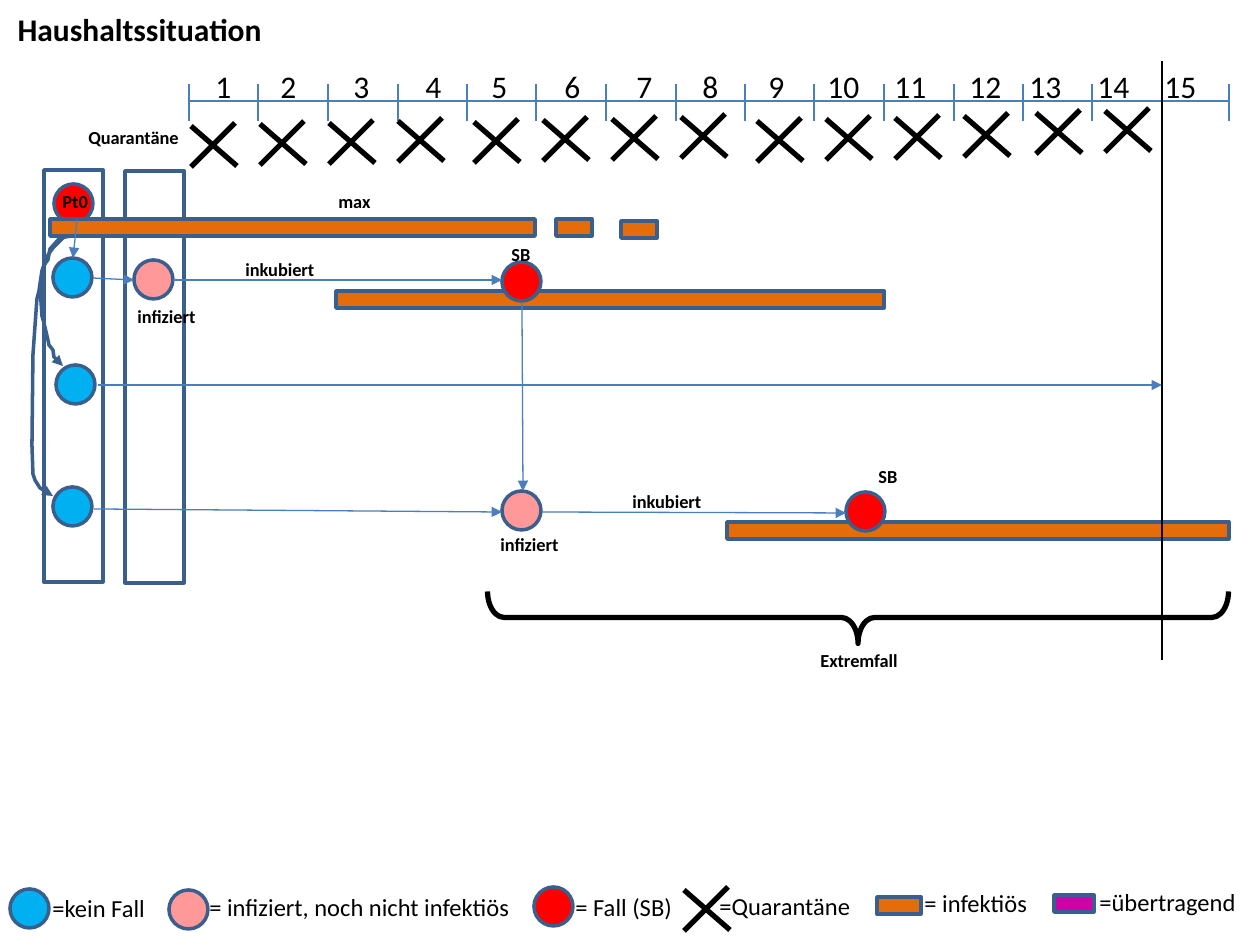
from pptx import Presentation
from pptx.dml.color import RGBColor
from pptx.enum.shapes import MSO_CONNECTOR as Connector, MSO_SHAPE as Shape
from pptx.enum.text import MSO_ANCHOR as Anchor, MSO_AUTO_SIZE as AutoSize, PP_ALIGN as Align
from pptx.oxml.ns import qn
from pptx.oxml.xmlchemy import OxmlElement
from pptx.util import Emu, Pt

BLACK = RGBColor(0x00, 0x00, 0x00)
OUTLINE = RGBColor(0x3A, 0x5F, 0x8C)
LINE_BLUE = RGBColor(0x4B, 0x7E, 0xBC)
HEALTHY = RGBColor(0x00, 0xB0, 0xF0)
INFECTED = RGBColor(0xFF, 0x99, 0x99)
CASE = RGBColor(0xFF, 0x00, 0x00)
INFECTIOUS = RGBColor(0xE4, 0x6C, 0x0A)
TRANSMITTING = RGBColor(0xCE, 0x02, 0xA7)
FONT = "Calibri"


def px(length):
    return Emu(round(length * 914400 / 126))


def add_arrowhead(shape):
    tail = OxmlElement("a:tailEnd")
    tail.set("type", "triangle")
    shape._element.spPr.find(qn("a:ln")).append(tail)


deck = Presentation()
deck.slide_width, deck.slide_height = px(1260), px(945)
page = deck.slides.add_slide(deck.slide_layouts[5])

# Title
title = page.shapes.title
title.left, title.top, title.width, title.height = px(5), px(4), px(271), px(50)
title.text_frame.word_wrap = False
title.text_frame.auto_size = AutoSize.NONE
title.text_frame.vertical_anchor = Anchor.TOP
para = title.text_frame.paragraphs[0]
para.alignment = Align.LEFT
span = para.add_run()
span.text = "Haushaltssituation"
span.font.name, span.font.size, span.font.bold = FONT, Pt(18), True
span.font.color.rgb = BLACK

# Columns, persons, infectious periods and legend symbols
RING, BAR = 39, 17
shapes = [
    (Shape.RECTANGLE, 44, 170, 59, 412, None),
    (Shape.RECTANGLE, 125, 171, 59, 412, None),
]
bars = [
    (50, 219, 485, INFECTIOUS), (556, 219, 36, INFECTIOUS), (621, 221, 36, INFECTIOUS),
    (336, 291, 548, INFECTIOUS), (727, 522, 502, INFECTIOUS),
    (877, 897, 44, INFECTIOUS), (1054, 895, 40, TRANSMITTING),
]
persons = [
    (53, 258, HEALTHY), (56, 365, HEALTHY), (53, 487, HEALTHY),
    (134, 260, INFECTED), (502, 491, INFECTED), (502, 262, CASE), (846, 492, CASE),
    (10, 889, HEALTHY), (169, 890, INFECTED), (534, 887, CASE),
]
shapes.append((Shape.OVAL, 54, 184, RING, RING, CASE))
shapes += [(Shape.RECTANGLE, x, y, width, BAR, fill) for x, y, width, fill in bars]
shapes += [(Shape.OVAL, x, y, RING, RING, fill) for x, y, fill in persons]
for kind, x, y, width, height, fill in shapes:
    shape = page.shapes.add_shape(kind, px(x), px(y), px(width), px(height))
    shape.shadow.inherit = False
    shape.line.color.rgb = OUTLINE
    shape.line.width = Pt(2)
    if fill is None:
        shape.fill.background()
    else:
        shape.fill.solid()
        shape.fill.fore_color.rgb = fill

# Brace for the extreme case
brace = page.shapes.add_shape(Shape.RIGHT_BRACE, px(832), px(247), px(52), px(741))
brace.rotation = 90
brace.adjustments[0], brace.adjustments[1] = 0.32, 0.5
brace.shadow.inherit = False
brace.fill.background()
brace.line.color.rgb = BLACK
brace.line.width = Pt(3)

# Curved transmission paths
curves = [
    [(73, 236), (64, 237), (53, 248), (48, 255), (45, 263), (42, 276), (40, 287),
     (42, 316), (44, 323), (48, 340), (49, 345), (53, 350), (54, 357), (59, 362), (63, 366)],
    [(68, 236), (59, 239), (50, 249), (48, 260), (44, 265), (42, 271), (39, 291),
     (37, 299), (33, 355), (32, 445), (33, 474), (35, 480), (40, 488), (48, 493), (53, 496)],
]
for points in curves:
    builder = page.shapes.build_freeform(*points[0], scale=float(px(1)))
    builder.add_line_segments(points[1:], close=False)
    curve = builder.convert_to_shape()
    curve.shadow.inherit = False
    curve.fill.background()
    curve.line.color.rgb = OUTLINE
    curve.line.width = Pt(2)
    add_arrowhead(curve)

# Day scale: 15 steps
ticks = [min(round(189 + 69.5 * day), 1229) for day in range(16)]
lines = [(x, 84, x, 121, LINE_BLUE, 1.25, False) for x in ticks]
lines += [(start, 101, end, 101, LINE_BLUE, 1.25, False)
          for start, end in zip(ticks, ticks[1:])]

# Quarantine crosses: groups of days, then the legend
for left, top, count in [(191, 126, 4), (474, 122, 4), (757, 121, 4), (1036, 113, 2), (684, 890, 1)]:
    for step in range(count):
        x, y = left + 69 * step, top - round(1.6 * step)
        lines.append((x, y, x + 46, y + 40, BLACK, 3, False))
        lines.append((x, y + 41, x + 44, y - 3, BLACK, 3, False))

# Courses of infection and the end of quarantine
for ends in [(173, 280, 502, 280), (77, 220, 73, 258), (93, 278, 134, 280),
             (542, 512, 846, 513), (98, 385, 1162, 385), (94, 509, 502, 512),
             (522, 302, 523, 491)]:
    lines.append((*ends, LINE_BLUE, 0.75, True))
lines.append((1162, 61, 1162, 660, BLACK, 0.75, False))

for x1, y1, x2, y2, color, width, arrow in lines:
    line = page.shapes.add_connector(Connector.STRAIGHT, px(x1), px(y1), px(x2), px(y2))
    line.line.color.rgb = color
    line.line.width = Pt(width)
    if arrow:
        add_arrowhead(line)
    line._element.spPr.append(OxmlElement("a:effectLst"))

# Day numbers, labels and legend text
number_lefts = [217, 282, 355, 427, 493, 566, 638, 704, 770, 829, 896, 971, 1031, 1099, 1166]
numbers = "\t".join(str(day) for day in range(1, 16))
texts = [(203, 61, 1042, 50, numbers, 18, False)]
for x, y, width, label in [
    (50, 184, 52, "Pt0"), (125, 299, 84, "infiziert"), (488, 527, 84, "infiziert"),
    (233, 252, 96, "inkubiert"), (620, 484, 96, "inkubiert"),
    (499, 237, 44, "SB"), (866, 459, 44, "SB"), (808, 643, 105, "Extremfall"),
    (76, 120, 117, "Quarantäne"), (326, 184, 58, "max"),
]:
    texts.append((x, y, width, 35, label, 10.5, True))
for x, y, width, label in [
    (40, 887, 118, "=kein Fall"), (197, 886, 326, "= infiziert, noch nicht infektiös"),
    (563, 886, 122, "= Fall (SB)"), (707, 885, 158, "=Quarantäne"),
    (912, 882, 130, "= infektiös"), (1087, 881, 164, "=übertragend"),
]:
    texts.append((x, y, width, 43, label, 14, False))

for x, y, width, height, label, size, bold in texts:
    box = page.shapes.add_textbox(px(x), px(y), px(width), px(height))
    box.text_frame.word_wrap = label == numbers
    box.text_frame.auto_size = AutoSize.SHAPE_TO_FIT_TEXT
    para = box.text_frame.paragraphs[0]
    span = para.add_run()
    span.text = label
    span.font.name, span.font.size, span.font.bold = FONT, Pt(size), bold
    span.font.color.rgb = BLACK
    if label == numbers:
        tabs = OxmlElement("a:tabLst")
        for left in number_lefts[1:]:
            tab = OxmlElement("a:tab")
            tab.set("pos", str(px(left - number_lefts[0])))
            tab.set("algn", "l")
            tabs.append(tab)
        para._p.get_or_add_pPr().append(tabs)

deck.save("out.pptx")
